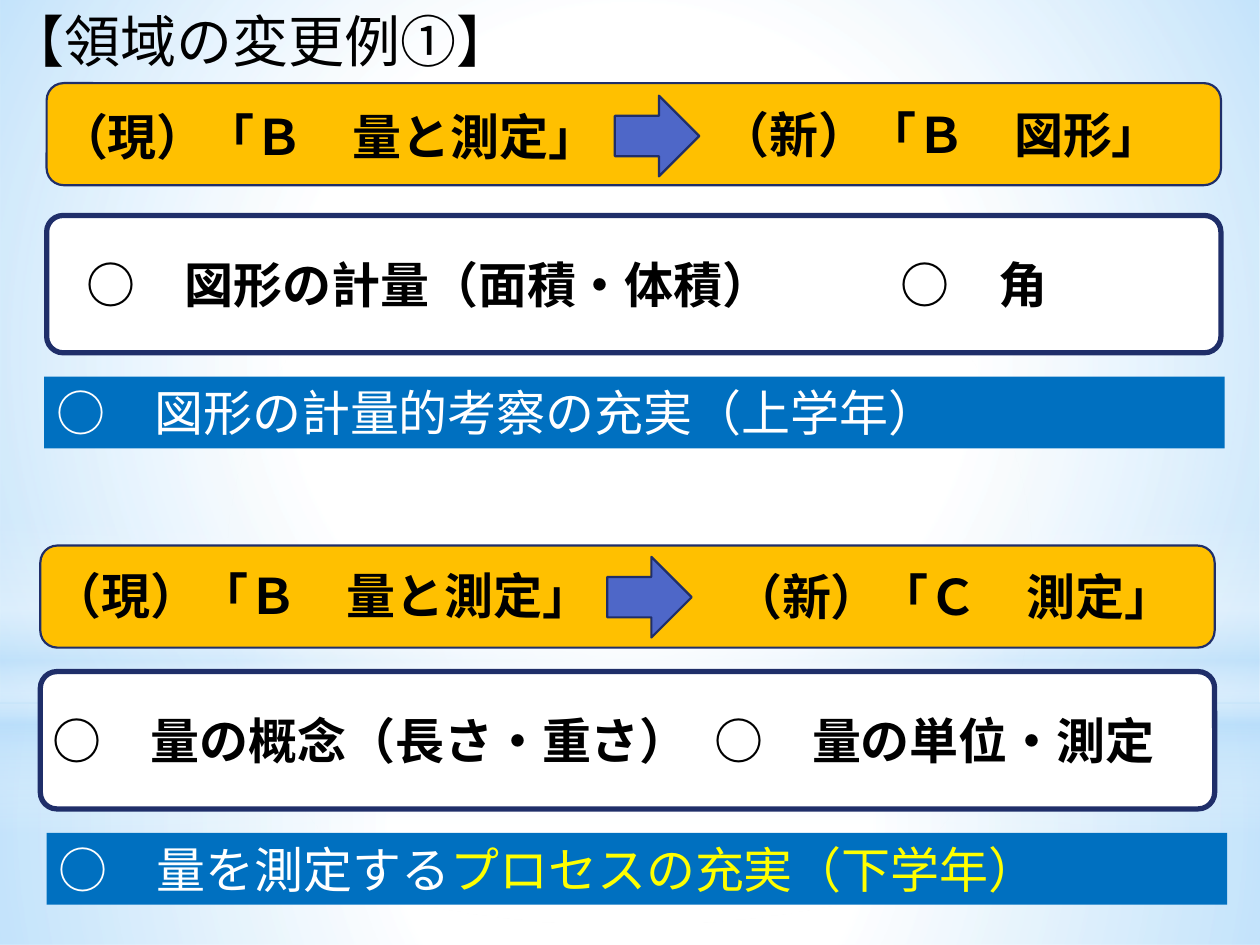
import pptx
import pptx.util
import pptx.dml.color
import pptx.enum.shapes
import pptx.enum.text
import pptx.oxml
import pptx.oxml.ns

Inches, Pt = pptx.util.Inches, pptx.util.Pt
SHAPE = pptx.enum.shapes.MSO_SHAPE

COLORS = {
    "white": "FFFFFF", "black": "000000", "yellow": "FFFF00", "sky": "B4DCFA",
    "bar": "0070C0", "heading": "FFC000", "arrow": "4E67C8", "outline": "1F2E69",
}
SANS, LATIN = "Noto Sans CJK JP", "Lato"
PANEL_WIDTH, BAR_WIDTH, LINE_HEIGHT = 9.32, 9.37, 0.57

# Backdrop: shape, (left, top, width, height), radial?, stops (position, colour, opacity)
BACKDROP = [
    (SHAPE.RECTANGLE, (0, 5.58, 10, 1.92), True,
     [(0, "white", 91), (37, "white", 76), (100, "sky", 79)]),
    (SHAPE.RECTANGLE, (0, 0, 10, 5.58), True,
     [(0, "white", 89), (48, "white", 62), (100, "sky", 79)]),
    (SHAPE.RECTANGLE, (0, 4.12, 10, 2.5), False,
     [(0, "white", 0), (29, "white", 30), (45, "sky", 40),
      (55, "white", 26), (65, "sky", 60), (100, "white", 0)]),
    (SHAPE.OVAL, (0, 1.75, 10, 5.58), True,
     [(0, "white", 100), (56, "white", 0)]),
]

TITLE = "【領域の変更例①】"
# Text entries: (text, left, top, width); bar spans: (text, colour)
SECTIONS = [
    {
        "left": 0.37, "heading_top": 0.66, "panel_top": 1.71,
        "arrow": (4.88, 0.76),
        "headings": [("（現）「Ｂ　量と測定」", 0.37, 0.8, 4.55),
                     ("（新）「Ｂ　図形」", 5.62, 0.78, 3.91)],
        "topics": [("○　図形の計量（面積・体積）", 0.59, 1.97, 5.83),
                   ("○　角", 7.05, 1.97, 1.5)],
        "bar": (0.35, 2.99),
        "bar_spans": [("○　図形の計量的考察の充実（上学年）", "white")],
    },
    {
        "left": 0.32, "heading_top": 4.33, "panel_top": 5.33,
        "arrow": (4.82, 4.42),
        "headings": [("（現）「Ｂ　量と測定」", 0.32, 4.44, 4.55),
                     ("（新）「Ｃ　測定」", 5.72, 4.45, 3.91)],
        "topics": [("○　量の概念（長さ・重さ）", 0.32, 5.59, 5.41),
                   ("○　量の単位・測定", 5.57, 5.59, 4.07)],
        "bar": (0.37, 6.61),
        "bar_spans": [("○　量を測定する", "white"),
                      ("プロセスの充実（下学年）", "yellow")],
    },
]


def rgb(name):
    return pptx.dml.color.RGBColor.from_string(COLORS[name])


def add_box(page, kind, area, fill=None, line_width=None):
    box = page.shapes.add_shape(kind, *map(Inches, area))
    box.shadow.inherit = False
    if fill:
        box.fill.solid()
        box.fill.fore_color.rgb = rgb(fill)
    else:
        box.fill.background()
    if line_width:
        box.line.color.rgb = rgb("outline")
        box.line.width = Pt(line_width)
    else:
        box.line.fill.background()
    return box


def add_gradient(box, radial, stops):
    stop_xml = "".join(
        f'<a:gs pos="{position * 1000}"><a:srgbClr val="{COLORS[color]}">'
        f'<a:alpha val="{opacity * 1000}"/></a:srgbClr></a:gs>'
        for position, color, opacity in stops)
    direction = (
        '<a:path path="circle"><a:fillToRect l="50000" t="50000" r="50000" b="50000"/></a:path>'
        if radial else '<a:lin ang="5400000" scaled="0"/>')
    gradient = pptx.oxml.parse_xml(
        f'<a:gradFill {pptx.oxml.ns.nsdecls("a")} rotWithShape="1">'
        f"<a:gsLst>{stop_xml}</a:gsLst>{direction}</a:gradFill>")
    properties = box.element.spPr
    properties.replace(properties.find(pptx.oxml.ns.qn("a:noFill")), gradient)


def write(box, spans, size=28, font=SANS, bold=False):
    frame = box.text_frame
    frame.word_wrap = True
    frame.auto_size = pptx.enum.text.MSO_AUTO_SIZE.SHAPE_TO_FIT_TEXT
    frame.vertical_anchor = pptx.enum.text.MSO_ANCHOR.TOP
    para = frame.paragraphs[0]
    para.alignment = pptx.enum.text.PP_ALIGN.LEFT
    for text, color in spans:
        span = para.add_run()
        span.text = text
        span.font.size, span.font.bold, span.font.name = Pt(size), bold, font
        span.font.color.rgb = rgb(color)
        # Japanese glyphs take the East Asian typeface
        span.font._element.find(pptx.oxml.ns.qn("a:latin")).addnext(
            pptx.oxml.parse_xml(f'<a:ea {pptx.oxml.ns.nsdecls("a")} typeface="{SANS}"/>'))


def add_label(page, text, left, top, width, height=LINE_HEIGHT, **style):
    box = page.shapes.add_textbox(*map(Inches, (left, top, width, height)))
    write(box, [(text, "black")], **style)


def add_section(page, section):
    left = section["left"]
    # Heading: current area, arrow, new area
    add_box(page, SHAPE.ROUNDED_RECTANGLE,
            (left, section["heading_top"], PANEL_WIDTH, 0.81), "heading", 1.25)
    add_box(page, SHAPE.RIGHT_ARROW, (*section["arrow"], 0.67, 0.64), "arrow", 1.25)
    for label in section["headings"]:
        add_label(page, *label, font=LATIN, bold=True)
    # Topics panel
    panel = add_box(page, SHAPE.ROUNDED_RECTANGLE,
                    (left, section["panel_top"], PANEL_WIDTH, 1.09), "white", 3)
    panel.adjustments[0] = 0.12
    for label in section["topics"]:
        add_label(page, *label, bold=True)
    # Summary bar
    bar = add_box(page, SHAPE.RECTANGLE, (*section["bar"], BAR_WIDTH, LINE_HEIGHT), "bar")
    write(bar, section["bar_spans"])


def main():
    deck = pptx.Presentation()
    deck.slide_width, deck.slide_height = Inches(10), Inches(7.5)
    page = deck.slides.add_slide(deck.slide_layouts[6])
    page.background.fill.solid()
    page.background.fill.fore_color.rgb = rgb("white")
    for kind, area, radial, stops in BACKDROP:
        add_gradient(add_box(page, kind, area), radial, stops)
    add_label(page, TITLE, -0.03, 0, 6.77, 0.64, size=32)
    for section in SECTIONS:
        add_section(page, section)
    deck.save("out.pptx")


if __name__ == "__main__":
    main()
